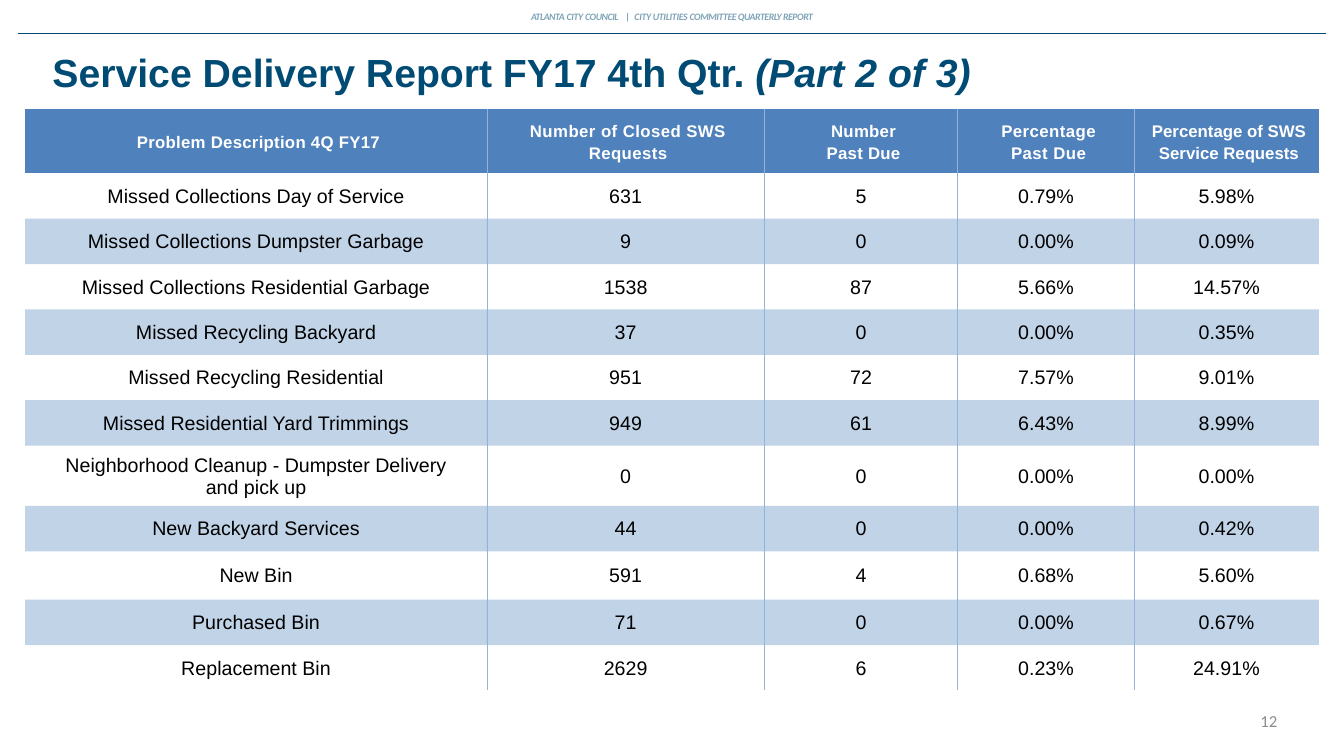
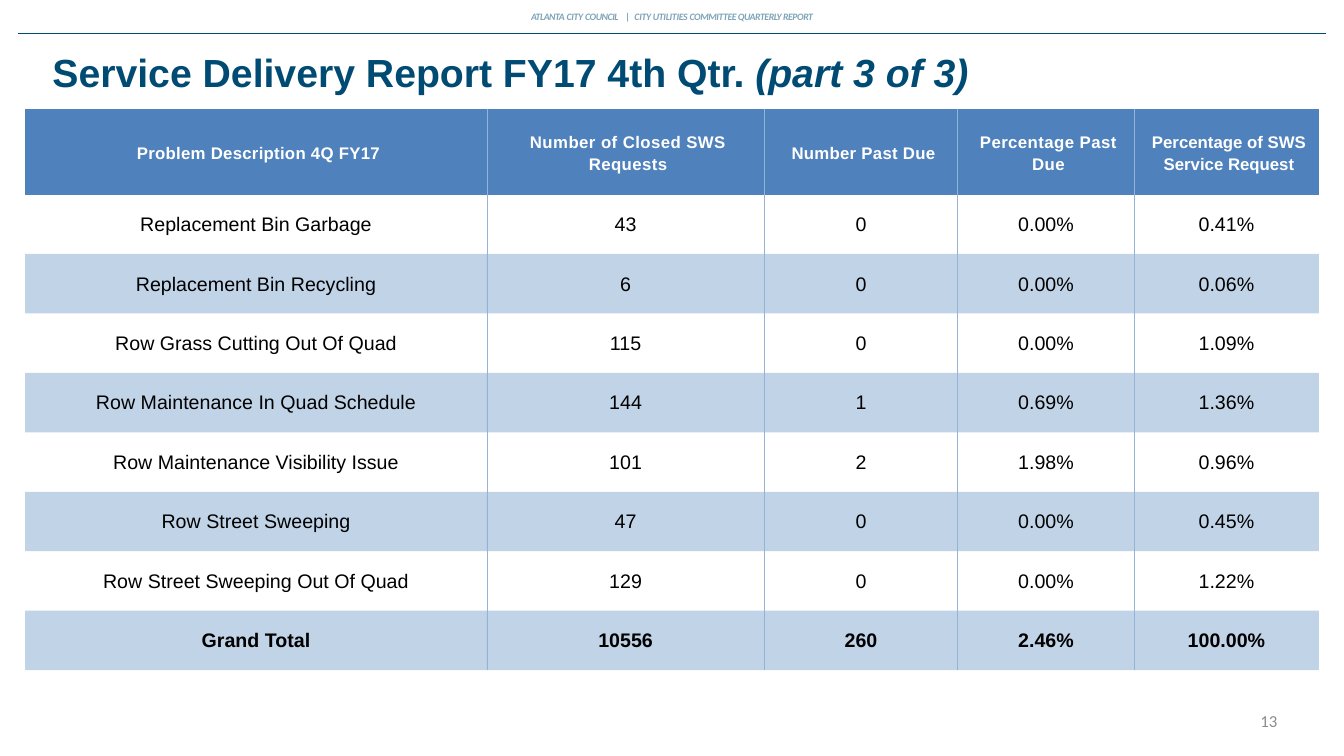
from lxml.etree import SubElement
from pptx import Presentation
from pptx.dml.color import RGBColor
from pptx.enum.shapes import MSO_CONNECTOR as Connector
from pptx.enum.text import MSO_ANCHOR as Anchor, MSO_AUTO_SIZE as AutoSize, PP_ALIGN as Align
from pptx.oxml.ns import qn
from pptx.util import Inches, Pt

NAVY, BLUE, BORDER = "004B73", "4F81BD", "95B3D7"
BAND_ALPHA = 35
NO_STYLE = "{2D5ABB26-0587-4C30-8999-92F81FD0307C}"

TITLE = {"name": "Arial", "size": Pt(28), "bold": True, "color": NAVY}
BANNER = {"name": "Calibri", "size": Pt(7), "bold": True, "italic": True, "color": "7FA4B8"}
NUMBER = {"name": "Calibri", "size": Pt(12), "color": "8C8C8C"}
HEADER = {"name": "Arial", "size": Pt(12), "bold": True, "color": "FFFFFF"}
BODY = {"name": "Arial", "size": Pt(14), "bold": False, "color": "000000"}
TOTAL = {**BODY, "bold": True}

# Banner text with letter spacing in points
BANNER_RUNS = [
    ("ATLANTA ", -0.3), ("CITY ", -0.2), ("COUNCIL", -0.3), (" ", 3.5), ("|", -0.1),
    (" ", 1.4), ("CITY UTILITIES ", -0.2), ("COMMITTEE QUARTERLY REPORT", -0.3),
]

COLUMN_WIDTHS = [4.58, 2.75, 1.92, 1.75, 1.83]
HEADER_SPACING = [0.2, 0.3, 0.2, 0.3, 0]


def rgb(value):
    return RGBColor.from_string(value)


class Deck:
    """Holds the shared style and the slide being built."""

    def __init__(self):
        self.presentation = Presentation()
        self.presentation.slide_width = Inches(13.33)
        self.presentation.slide_height = Inches(7.5)
        self.slide = None

    def add_run(self, paragraph, text, style, spacing=0):
        run = paragraph.add_run()
        run.text = text
        for key, value in style.items():
            if key == "color":
                run.font.color.rgb = rgb(value)
            else:
                setattr(run.font, key, value)
        if spacing:
            run.font._element.set("spc", str(round(spacing * 100)))

    def set_margins(self, target, left=0, top=0, right=0, bottom=0):
        for side, value in zip(("left", "top", "right", "bottom"), (left, top, right, bottom)):
            setattr(target, f"margin_{side}", Inches(value))

    def start_slide(self, number, title, part):
        self.slide = self.presentation.slides.add_slide(self.presentation.slide_layouts[5])
        self.text_box((4.86, 0.11, 3.61, 0.26), BANNER_RUNS, BANNER, Align.CENTER)
        self.rule(0.18, 13.15, 0.33)
        self.text_box((9.6, 7.05, 3.07, 0.2), [(str(number), 0)], NUMBER,
                      Align.RIGHT, Anchor.MIDDLE)
        self.title(title, part)

    def title(self, text, part):
        shape = self.slide.shapes.title
        shape.left, shape.top, shape.width, shape.height = map(Inches, (0.42, 0.42, 12.67, 0.58))
        frame = shape.text_frame
        frame.auto_size = AutoSize.NONE
        frame.vertical_anchor = Anchor.MIDDLE
        paragraph = frame.paragraphs[0]
        paragraph.alignment = Align.LEFT
        paragraph.space_after = Pt(6)
        self.add_run(paragraph, text + " ", TITLE)
        self.add_run(paragraph, part, {**TITLE, "italic": True})

    def text_box(self, box, runs, style, alignment, anchor=Anchor.TOP):
        frame = self.slide.shapes.add_textbox(*map(Inches, box)).text_frame
        frame.word_wrap = True
        frame.vertical_anchor = anchor
        self.set_margins(frame)
        paragraph = frame.paragraphs[0]
        paragraph.alignment = alignment
        for text, spacing in runs:
            self.add_run(paragraph, text, style, spacing)

    def rule(self, left, right, top):
        line = self.slide.shapes.add_connector(
            Connector.STRAIGHT, Inches(left), Inches(top), Inches(right), Inches(top))
        line.line.color.rgb = rgb(NAVY)
        line.line.width = Pt(0.75)
        SubElement(line._element.spPr, qn("a:effectLst"))

    def table(self, header, rows, heights, has_total=False):
        shape = self.slide.shapes.add_table(
            len(rows) + 1, len(header), Inches(0.25), Inches(1.08),
            Inches(sum(COLUMN_WIDTHS)), Inches(sum(heights)))
        table = shape.table
        table._tbl.tblPr.find(qn("a:tableStyleId")).text = NO_STYLE
        table.horz_banding = False
        for column, width in zip(table.columns, COLUMN_WIDTHS):
            column.width = Inches(width)
        for row, height in zip(table.rows, heights):
            row.height = Inches(height)

        for column, (text, spacing) in enumerate(zip(header, HEADER_SPACING)):
            self.header_cell(table.cell(0, column), text, spacing)
        for index, values in enumerate(rows, 1):
            style = TOTAL if has_total and index == len(rows) else BODY
            for column, text in enumerate(values):
                self.body_cell(table.cell(index, column), text, style, index % 2 == 0)

        # Vertical lines between columns
        last = len(header) - 1
        for index in range(len(rows) + 1):
            for column in range(last + 1):
                properties = table.cell(index, column)._tc.get_or_add_tcPr()
                sides = ["a:lnL"] * (column > 0) + ["a:lnR"] * (column < last)
                for position, side in enumerate(sides):
                    self.border(properties, side, position)

    def border(self, properties, side, position):
        line = SubElement(properties, qn(side), w=str(Pt(0.5)))
        fill = SubElement(line, qn("a:solidFill"))
        SubElement(fill, qn("a:srgbClr"), val=BORDER)
        properties.insert(position, line)

    def cell_text(self, cell, text, style, spacing=0):
        cell.vertical_anchor = Anchor.MIDDLE
        frame = cell.text_frame
        for index, line in enumerate(text.split("\n")):
            paragraph = frame.add_paragraph() if index else frame.paragraphs[0]
            paragraph.alignment = Align.CENTER
            self.add_run(paragraph, line, style, spacing)
        return frame.paragraphs

    def header_cell(self, cell, text, spacing):
        cell.fill.solid()
        cell.fill.fore_color.rgb = rgb(BLUE)
        for paragraph in self.cell_text(cell, text, HEADER, spacing):
            paragraph.line_spacing = Pt(16)
            paragraph._p.get_or_add_pPr().set("marL", str(Inches(0.05)))

    def body_cell(self, cell, text, style, banded):
        self.set_margins(cell, 0.01, 0.01, 0.01)
        self.cell_text(cell, text, style)
        if banded:
            cell.fill.solid()
            cell.fill.fore_color.rgb = rgb(BLUE)
            color = cell._tc.tcPr.find(".//" + qn("a:srgbClr"))
            SubElement(color, qn("a:alpha"), val=str(BAND_ALPHA * 1000))
        else:
            cell.fill.background()


def main():
    deck = Deck()
    title = "Service Delivery Report FY17 4th Qtr."
    problem, closed = "Problem Description 4Q FY17", "Number of Closed SWS Requests"

    # Part 2: collections, recycling and bins
    deck.start_slide(12, title, "(Part 2 of 3)")
    deck.table(
        [problem, closed, "Number\nPast Due", "Percentage\nPast Due",
         "Percentage of SWS Service Requests"],
        [
            ("Missed Collections Day of Service", "631", "5", "0.79%", "5.98%"),
            ("Missed Collections Dumpster Garbage", "9", "0", "0.00%", "0.09%"),
            ("Missed Collections Residential Garbage", "1538", "87", "5.66%", "14.57%"),
            ("Missed Recycling Backyard", "37", "0", "0.00%", "0.35%"),
            ("Missed Recycling Residential", "951", "72", "7.57%", "9.01%"),
            ("Missed Residential Yard Trimmings", "949", "61", "6.43%", "8.99%"),
            ("Neighborhood Cleanup - Dumpster Delivery\nand pick up",
             "0", "0", "0.00%", "0.00%"),
            ("New Backyard Services", "44", "0", "0.00%", "0.42%"),
            ("New Bin", "591", "4", "0.68%", "5.60%"),
            ("Purchased Bin", "71", "0", "0.00%", "0.67%"),
            ("Replacement Bin", "2629", "6", "0.23%", "24.91%"),
        ],
        [0.64] + [0.45] * 6 + [0.6, 0.45, 0.48, 0.45, 0.45])

    # Part 3: replacement bins, row work and the grand total
    deck.start_slide(13, title, "(part 3 of 3)")
    deck.table(
        [problem, closed, "Number Past Due", "Percentage Past Due",
         "Percentage of SWS Service Request"],
        [
            ("Replacement Bin Garbage", "43", "0", "0.00%", "0.41%"),
            ("Replacement Bin Recycling", "6", "0", "0.00%", "0.06%"),
            ("Row Grass Cutting Out Of Quad", "115", "0", "0.00%", "1.09%"),
            ("Row Maintenance In Quad Schedule", "144", "1", "0.69%", "1.36%"),
            ("Row Maintenance Visibility Issue", "101", "2", "1.98%", "0.96%"),
            ("Row Street Sweeping", "47", "0", "0.00%", "0.45%"),
            ("Row Street Sweeping Out Of Quad", "129", "0", "0.00%", "1.22%"),
            ("Grand Total", "10556", "260", "2.46%", "100.00%"),
        ],
        [0.85] + [0.59] * 8, has_total=True)

    deck.presentation.save("out.pptx")


if __name__ == "__main__":
    main()
